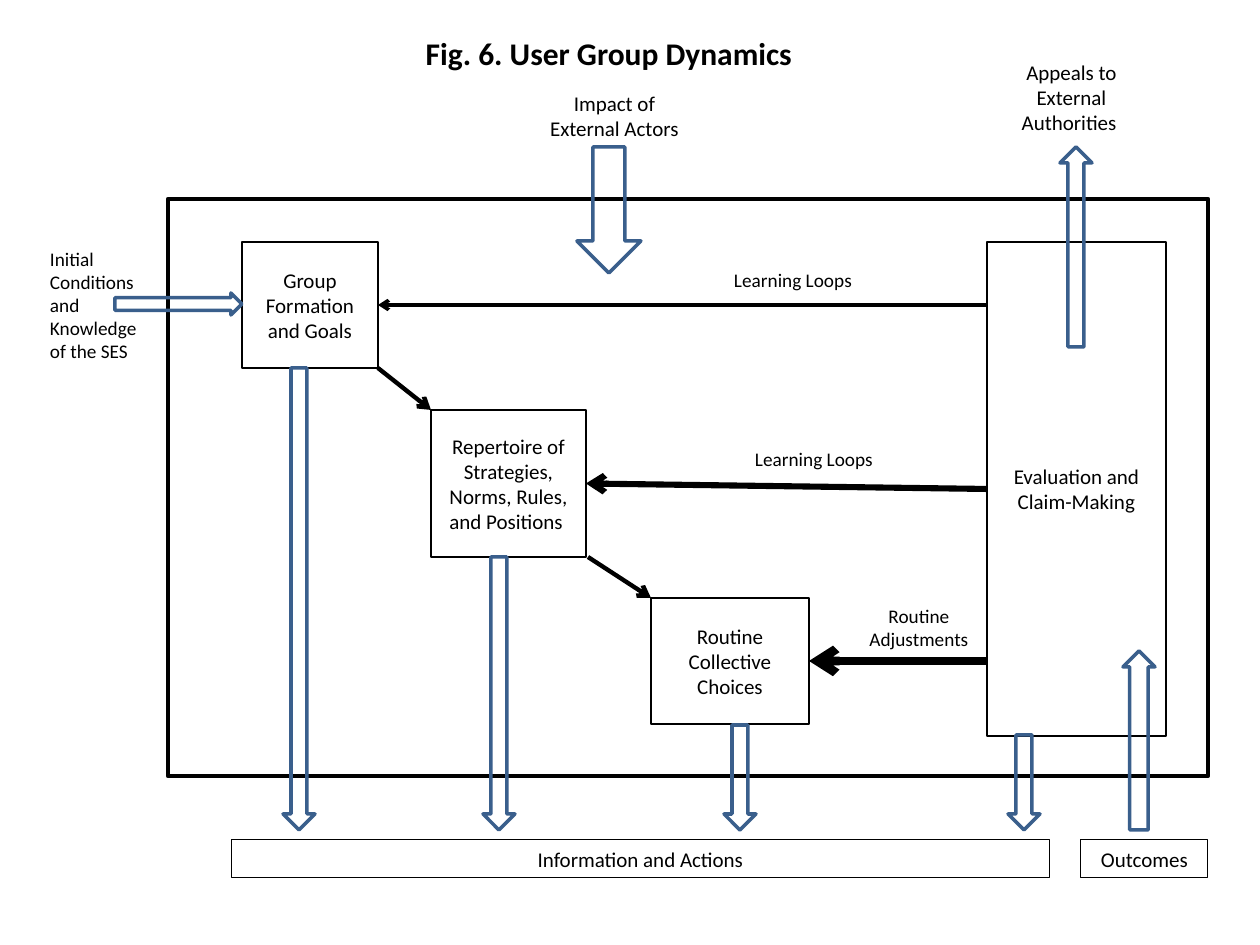
import pptx
import pptx.util
import pptx.dml.color
import pptx.enum.shapes
import pptx.enum.text
import pptx.oxml

PX = 914400 // 126
FONT = "Calibri"
COLORS = {"ink": "000000", "arrow": "3A5F8C"}
TITLE = ("Fig. 6. User Group Dynamics", (94, 32, 1030, 42))

FRAME = (168, 199, 1040, 577)
STAGES = {
    "evaluation": ("Evaluation and Claim-Making", (987, 242, 179, 494)),
    "choices": ("Routine Collective Choices", (651, 598, 158, 126)),
    "repertoire": ("Repertoire of Strategies, Norms, Rules, and Positions ", (431, 410, 155, 147)),
    "group": ("Group Formation and Goals", (242, 242, 136, 126)),
}
RESULTS = [
    ("Outcomes", (1081, 840, 127, 38)),
    ("Information and Actions", (231, 840, 819, 38)),
]
LABELS = [
    ("Appeals to External Authorities ", 12, (998, 53, 147, 89)),
    ("Impact of External Actors", 12, (525, 84, 179, 63)),
    ("Learning Loops", 11, (714, 262, 158, 37)),
    ("Learning Loops", 11, (735, 441, 158, 37)),
    ("Routine Adjustments", 11, (851, 598, 136, 59)),
]
INITIAL = ("Initial Conditions and Knowledge of the SES", 11, (32, 242, 126, 126))

BLOCK_ARROWS = [
    ("UP", (1060, 147, 32, 200), 0.5),
    ("UP", (1123, 651, 32, 179), 0.578),
    ("RIGHT", (115, 293, 127, 22), 0.578),
    ("DOWN", (577, 147, 64, 126), 0.5),
    ("DOWN", (283, 368, 32, 462), 0.5),
    ("DOWN", (483, 557, 32, 273), 0.5),
    ("DOWN", (724, 725, 32, 105), 0.5),
    ("DOWN", (1008, 735, 32, 95), 0.5),
]
STEPS = [((378, 368), (431, 410)), ((588, 557), (651, 598))]
LOOPS = [("group", 305, 2), ("repertoire", 489, 3.5), ("choices", 661, 5)]

Shape = pptx.enum.shapes.MSO_SHAPE
Align = pptx.enum.text.PP_ALIGN
Anchor = pptx.enum.text.MSO_ANCHOR


def color(name):
    return pptx.dml.color.RGBColor.from_string(COLORS[name])


def scaled(values):
    return [value * PX for value in values]


def write(box, text, size, align=Align.CENTER, anchor=Anchor.MIDDLE, bold=False):
    frame = box.text_frame
    frame.text = text
    frame.word_wrap = True
    frame.vertical_anchor = anchor
    paragraph = frame.paragraphs[0]
    paragraph.alignment = align
    font = paragraph.runs[0].font
    font.name, font.size, font.bold = FONT, pptx.util.Pt(size), bold
    font.color.rgb = color("ink")


def add_outline(page, kind, place, width, line="ink"):
    shape = page.shapes.add_shape(kind, *scaled(place))
    shape.shadow.inherit = False
    shape.fill.background()
    shape.line.color.rgb = color(line)
    shape.line.width = pptx.util.Pt(width)
    return shape


def add_label(page, text, size, place, **layout):
    box = page.shapes.add_textbox(*scaled(place))
    write(box, text, size, **layout)
    return box


def add_arrow(page, start, end, width):
    arrow = page.shapes.add_connector(
        pptx.enum.shapes.MSO_CONNECTOR.STRAIGHT, *scaled(start + end))
    arrow.line.color.rgb = color("ink")
    arrow.line.width = pptx.util.Pt(width)
    head = pptx.oxml.parse_xml(
        '<a:tailEnd xmlns:a="http://schemas.openxmlformats.org/drawingml/2006/main" type="arrow"/>')
    arrow.line._get_or_add_ln().append(head)
    arrow._element.spPr.append(pptx.oxml.parse_xml(
        '<a:effectLst xmlns:a="http://schemas.openxmlformats.org/drawingml/2006/main"/>'))
    return arrow


def main():
    deck = pptx.Presentation()
    deck.slide_width, deck.slide_height = pptx.util.Inches(10), pptx.util.Inches(7.5)
    page = deck.slides.add_slide(deck.slide_layouts[5])

    title = page.shapes.title
    text, place = TITLE
    title.left, title.top, title.width, title.height = scaled(place)
    write(title, text, 18, bold=True)

    stages = {}
    for name, (text, place) in STAGES.items():
        stages[name] = add_outline(page, Shape.RECTANGLE, place, 1.5)
        write(stages[name], text, 12)
    add_outline(page, Shape.RECTANGLE, FRAME, 2.5)

    for direction, place, shaft in BLOCK_ARROWS:
        arrow = add_outline(page, Shape[direction + "_ARROW"], place, 2, "arrow")
        arrow.adjustments[0] = shaft
        arrow.adjustments[1] = 0.5

    for start, end in STEPS:
        add_arrow(page, start, end, 2.5)

    for text, place in RESULTS:
        write(add_outline(page, Shape.RECTANGLE, place, 0.5), text, 12, anchor=Anchor.TOP)

    evaluation_left = STAGES["evaluation"][1][0]
    for name, y, width in LOOPS:
        left, top, box_width, box_height = STAGES[name][1]
        end = (left + box_width, top + box_height // 2)
        loop = add_arrow(page, (evaluation_left, y), end, width)
        loop.end_connect(stages[name], 3)
        if name == "repertoire":
            loop.begin_connect(stages["evaluation"], 1)

    for text, size, place in LABELS:
        add_label(page, text, size, place, anchor=Anchor.TOP)
    initial = add_label(page, *INITIAL, align=Align.LEFT)
    initial.text_frame.margin_left = 18 * PX

    deck.save("out.pptx")


if __name__ == "__main__":
    main()
